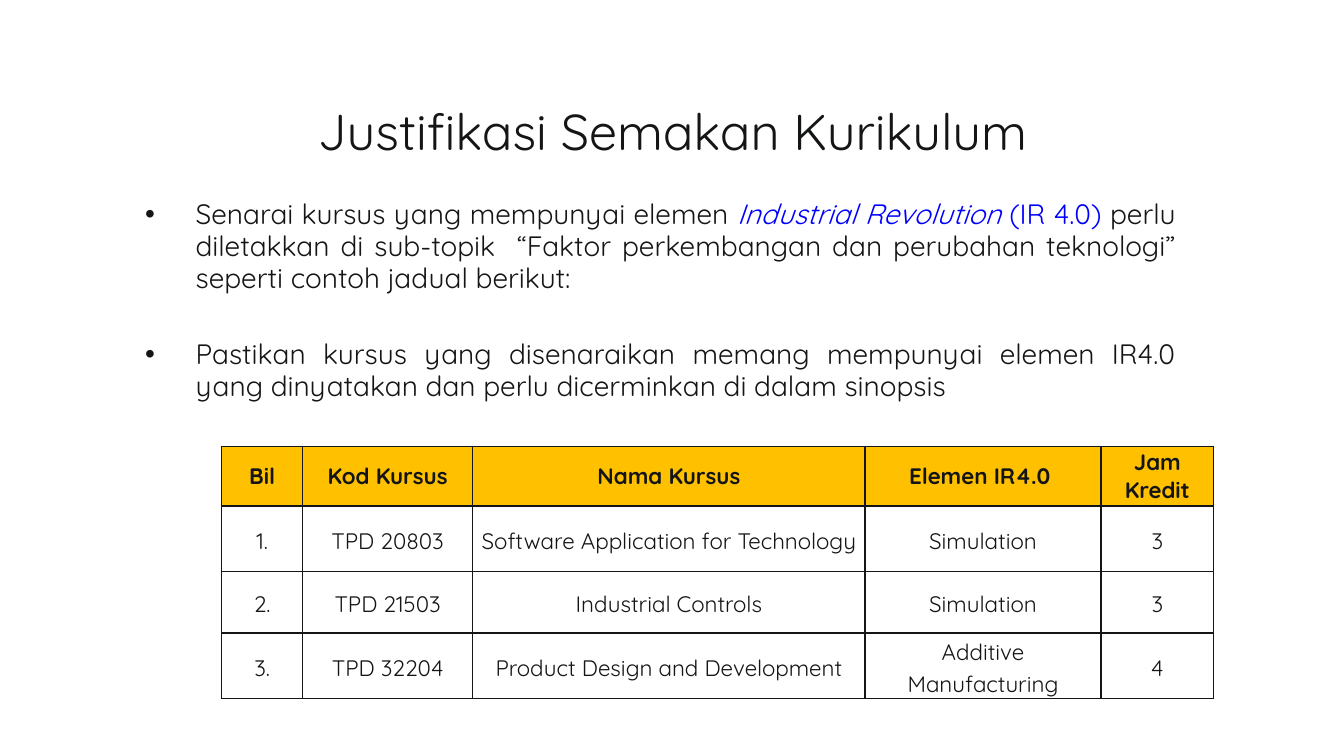
import pptx
import pptx.dml.color
import pptx.enum.text
import pptx.oxml
import pptx.oxml.ns
import pptx.util

PX = 9144  # EMU per px, 100 px to the inch
FONT = "Quicksand"
INK, BLUE, GOLD = "141516", "0000FF", "FFC000"
ALIGN = pptx.enum.text.PP_ALIGN
MIDDLE = pptx.enum.text.MSO_ANCHOR.MIDDLE

BULLETS = [
    [("Senarai kursus yang mempunyai elemen ", {}),
     ("Industrial Revolution", {"color": BLUE, "italic": True}),
     (" (IR 4.0) ", {"color": BLUE}),
     ("perlu diletakkan di sub-topik  “Faktor perkembangan dan perubahan "
      "teknologi” seperti contoh jadual berikut:", {})],
    [("Pastikan kursus yang disenaraikan memang mempunyai elemen IR4.0 yang "
      "dinyatakan dan perlu dicerminkan di dalam sinopsis", {})],
]
COL_WIDTHS = [80, 169, 389, 234, 112]
ROW_HEIGHTS = [59, 65, 61, 65]
COURSES = [
    ["Bil", "Kod Kursus", "Nama Kursus", "Elemen IR4.0 ", "Jam Kredit"],
    ["1.", "TPD 20803", "Software Application for Technology", "Simulation", "3"],
    ["2.", "TPD 21503", "Industrial Controls", "Simulation", "3"],
    ["3.", "TPD 32204", "Product Design and Development",
     "Additive Manufacturing", "4"],
]


def rgb(value):
    return pptx.dml.color.RGBColor.from_string(value)


def place(sp, *box):
    for name, px in zip(("left", "top", "width", "height"), box):
        setattr(sp, name, px * PX)


def add_run(p, text, size, color=INK, **formats):
    r = p.add_run()
    r.text = text
    r.font.color.rgb = rgb(color)
    for name, value in {"name": FONT, "size": pptx.util.Pt(size), **formats}.items():
        setattr(r.font, name, value)


def add_title(s, text):
    sp = s.shapes.title
    place(sp, 67, 67, 1200, 125)
    tf = sp.text_frame
    tf.vertical_anchor = MIDDLE
    p = tf.paragraphs[0]
    p.alignment = ALIGN.CENTER
    add_run(p, text, 36)


def set_bullet(p, indent):
    pPr = p._p.get_or_add_pPr()
    pPr.set("marL", str(indent * PX))
    pPr.set("indent", str(-indent * PX))
    ns = pptx.oxml.ns.nsdecls("a")
    pPr.append(pptx.oxml.parse_xml(f'<a:buFont {ns} typeface="Arial"/>'))
    pPr.append(pptx.oxml.parse_xml(f'<a:buChar {ns} char="•"/>'))


def add_bullets(s, bullets):
    sp = s.placeholders[1]
    place(sp, 134, 192, 1042, 478)
    tf = sp.text_frame
    for i, runs in enumerate(bullets):
        p = tf.add_paragraph() if i else tf.paragraphs[0]
        set_bullet(p, 50)
        p.alignment = ALIGN.JUSTIFY
        p.line_spacing = 0.95
        p.space_before = pptx.util.Pt(32 if i else 0)
        for text, formats in runs:
            add_run(p, text, 20, **formats)


def set_borders(cell, color, points):
    tcPr = cell._tc.get_or_add_tcPr()
    ns = pptx.oxml.ns.nsdecls("a")
    for i, side in enumerate("LRTB"):
        tcPr.insert(i, pptx.oxml.parse_xml(
            f'<a:ln{side} {ns} w="{pptx.util.Pt(points)}"><a:solidFill>'
            f'<a:srgbClr val="{color}"/></a:solidFill></a:ln{side}>'))


def fill_cell(cell, text, header):
    margins = {"margin_left": 7, "margin_right": 7, "margin_top": 0, "margin_bottom": 0}
    for name, px in margins.items():
        setattr(cell, name, px * PX)
    cell.vertical_anchor = MIDDLE
    if header:
        cell.fill.solid()
        cell.fill.fore_color.rgb = rgb(GOLD)
    else:
        cell.fill.background()
    set_borders(cell, INK, 1)
    p = cell.text_frame.paragraphs[0]
    p.alignment = ALIGN.CENTER
    p.line_spacing = 1.0 if header else 1.15
    add_run(p, text, 16, bold=header)


def add_course_table(s, rows):
    box = (220, 443, sum(COL_WIDTHS), sum(ROW_HEIGHTS))
    table = s.shapes.add_table(len(rows), len(COL_WIDTHS),
                               *(px * PX for px in box)).table
    table.first_row = table.horz_banding = False
    for col, width in zip(table.columns, COL_WIDTHS):
        col.width = width * PX
    for i, (row, height) in enumerate(zip(table.rows, ROW_HEIGHTS)):
        row.height = height * PX
        for cell, text in zip(row.cells, rows[i]):
            fill_cell(cell, text, header=i == 0)


def main():
    prs = pptx.Presentation()
    prs.slide_width, prs.slide_height = 1333 * PX, 750 * PX
    s = prs.slides.add_slide(prs.slide_layouts[1])
    add_title(s, "Justifikasi Semakan Kurikulum")
    add_bullets(s, BULLETS)
    add_course_table(s, COURSES)
    prs.save("out.pptx")


if __name__ == "__main__":
    main()
